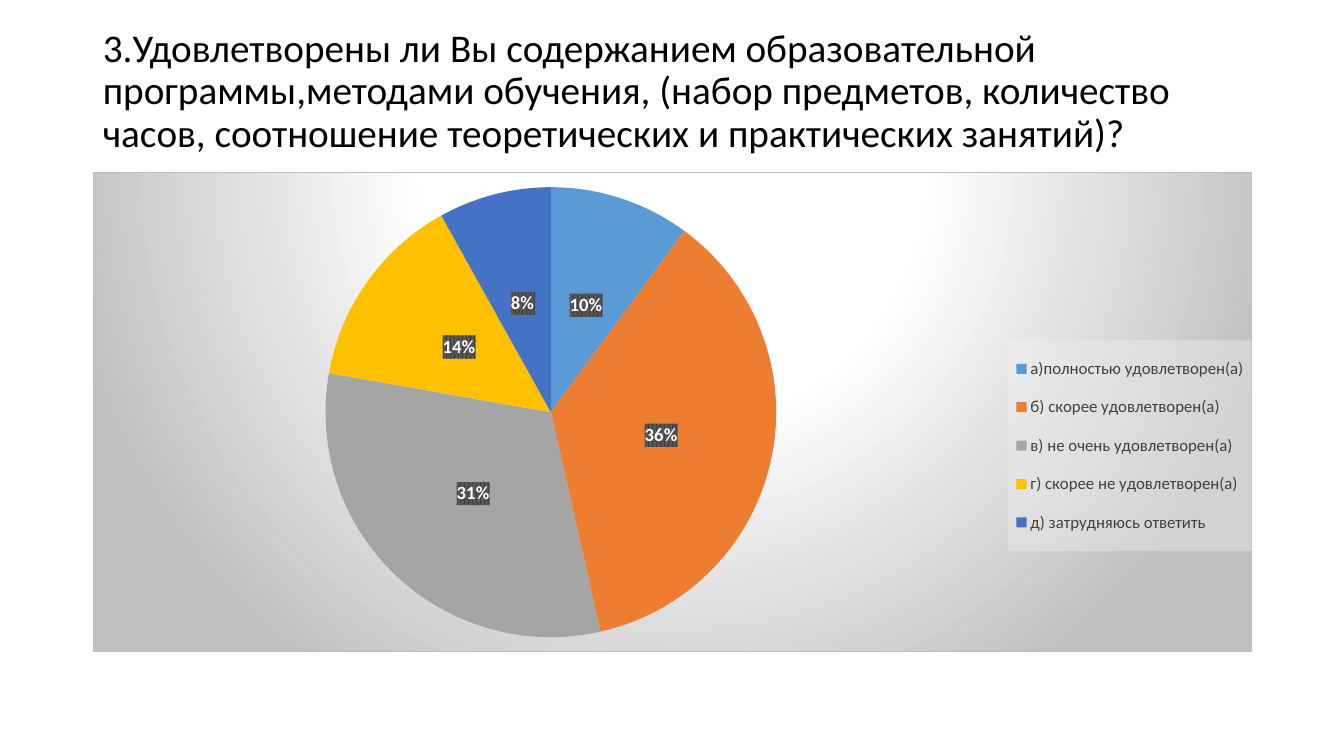
from lxml import etree
from pptx import Presentation
from pptx import util as u
from pptx.chart.data import CategoryChartData
from pptx.dml.color import RGBColor
from pptx.enum import chart as ch, text as tx
from pptx.oxml import ns, parse_xml

FONT = "Calibri"
TITLE = ("3.Удовлетворены ли Вы содержанием образовательной "
         "программы,методами обучения, (набор предметов, количество часов, "
         "соотношение теоретических и практических занятий)?")
VOTES = [
    ("а)полностью удовлетворен(а)", 10, "5B9BD5"),
    ("б) скорее удовлетворен(а)", 36, "ED7D31"),
    ("в) не очень удовлетворен(а)", 31, "A5A5A5"),
    ("г) скорее не удовлетворен(а)", 14, "FFC000"),
    ("д) затрудняюсь ответить", 8, "4472C4"),
]


def rgb(code):
    """Turn a hex string into a colour."""
    return RGBColor.from_string(code)


def style(font, size, color, bold=False):
    """Set the look of a font."""
    look = {"name": FONT, "size": u.Pt(size), "bold": bold}
    for key, val in look.items():
        setattr(font, key, val)
    font.color.rgb = rgb(color)


def ink(code, extra=""):
    """Return the XML of a colour."""
    return f'<a:srgbClr val="{code}">{extra}</a:srgbClr>'


def skin(fill):
    """Return chart shape properties around the given fill XML."""
    return parse_xml(f'<c:spPr {ns.nsdecls("c", "a")}>{fill}</c:spPr>')


def place(node, box, inner=False):
    """Give a chart part a manual layout in fractions of the chart."""
    for old in node.findall(ns.qn("c:layout")):
        node.remove(old)
    lay = parse_xml(f'<c:layout {ns.nsdecls("c")}><c:manualLayout/></c:layout>')
    pairs = [("layoutTarget", "inner")] if inner else []
    pairs += [("xMode", "edge"), ("yMode", "edge")] + list(zip("xywh", box))
    for key, val in pairs:
        etree.SubElement(lay[0], ns.qn(f"c:{key}")).set("val", str(val))
    mark = node.find(ns.qn("c:legendPos"))
    node.insert(0 if mark is None else 1, lay)


def head(slide, x, y, w, h):
    """Fill the title placeholder."""
    title = slide.shapes.title
    spot = {"left": x, "top": y, "width": w, "height": h}
    for key, val in spot.items():
        setattr(title, key, u.Inches(val))
    frame = title.text_frame
    look = {"text": TITLE, "word_wrap": True, "auto_size": tx.MSO_AUTO_SIZE.NONE,
            "vertical_anchor": tx.MSO_ANCHOR.MIDDLE, "margin_bottom": u.Inches(0.47)}
    for key, val in look.items():
        setattr(frame, key, val)
    para = frame.paragraphs[0]
    para.alignment = tx.PP_ALIGN.LEFT
    para.line_spacing = 0.9
    style(para.runs[0].font, 28, "000000")


def pie(slide, x, y, w, h):
    """Draw the pie of answers with its legend."""
    names, vals, hues = zip(*VOTES)
    data = CategoryChartData()
    data.categories = names
    data.add_series("Series 1", vals)
    box = [u.Inches(n) for n in (x, y, w, h)]
    chart = slide.shapes.add_chart(ch.XL_CHART_TYPE.PIE, *box, data).chart
    style(chart.font, 10, "000000")
    chart.has_title = False
    chart.has_legend = True
    chart.legend.position = ch.XL_LEGEND_POSITION.RIGHT
    chart.legend.include_in_layout = False
    style(chart.legend.font, 12, "404040")
    plot = chart.plots[0]
    plot.vary_by_categories = True
    for num, hue in enumerate(hues):
        part = plot.series[0].points[num].format
        part.fill.solid()
        part.fill.fore_color.rgb = rgb(hue)
        part.line.fill.background()
    tags = plot.series[0].data_labels
    look = {"show_percentage": True, "show_value": False, "number_format": "0%",
            "number_format_is_linked": False,
            "position": ch.XL_LABEL_POSITION.CENTER}
    for key, val in look.items():
        setattr(tags, key, val)
    style(tags.font, 13.3, "FFFFFF", True)
    dress(chart.element)


def dress(root):
    """Add the gradient, the fills and the layout of the chart parts."""
    stops = "".join(f'<a:gs pos="{pos}000">{ink(hue)}</a:gs>' for pos, hue in
                    ((0, "FFFFFF"), (39, "FFFFFF"), (100, "BFBFBF")))
    back = (f'<a:gradFill><a:gsLst>{stops}</a:gsLst><a:path path="circle">'
            '<a:fillToRect l="50000" t="-80000" r="50000" b="180000"/></a:path>'
            f'</a:gradFill><a:ln w="9525"><a:solidFill>{ink("BFBFBF")}'
            '</a:solidFill></a:ln>')
    root.find(ns.qn("c:chart")).addnext(skin(back))
    dots = (f'<a:pattFill prst="pct75"><a:fgClr>{ink("404040")}</a:fgClr>'
            f'<a:bgClr>{ink("595959")}</a:bgClr></a:pattFill>')
    pale = ink("F2F2F2", '<a:alpha val="39000"/>')
    veil = f'<a:solidFill>{pale}</a:solidFill>'
    for name, fill in (("dLbls", dots), ("legend", veil)):
        node = next(root.iter(ns.qn(f"c:{name}")))
        node.find(ns.qn("c:txPr")).addprevious(skin(fill))
    place(next(root.iter(ns.qn("c:plotArea"))), (0.2, 0.03, 0.39, 0.94), True)
    place(next(root.iter(ns.qn("c:legend"))), (0.79, 0.35, 0.21, 0.44))


def main():
    """Build and save the slide."""
    deck = Presentation()
    deck.slide_width, deck.slide_height = u.Inches(13.33), u.Inches(7.5)
    slide = deck.slides.add_slide(deck.slide_layouts[5])
    head(slide, 0.92, 0.4, 11.5, 1.45)
    pie(slide, 0.92, 1.71, 11.5, 4.76)
    deck.save("out.pptx")


if __name__ == "__main__":
    main()
